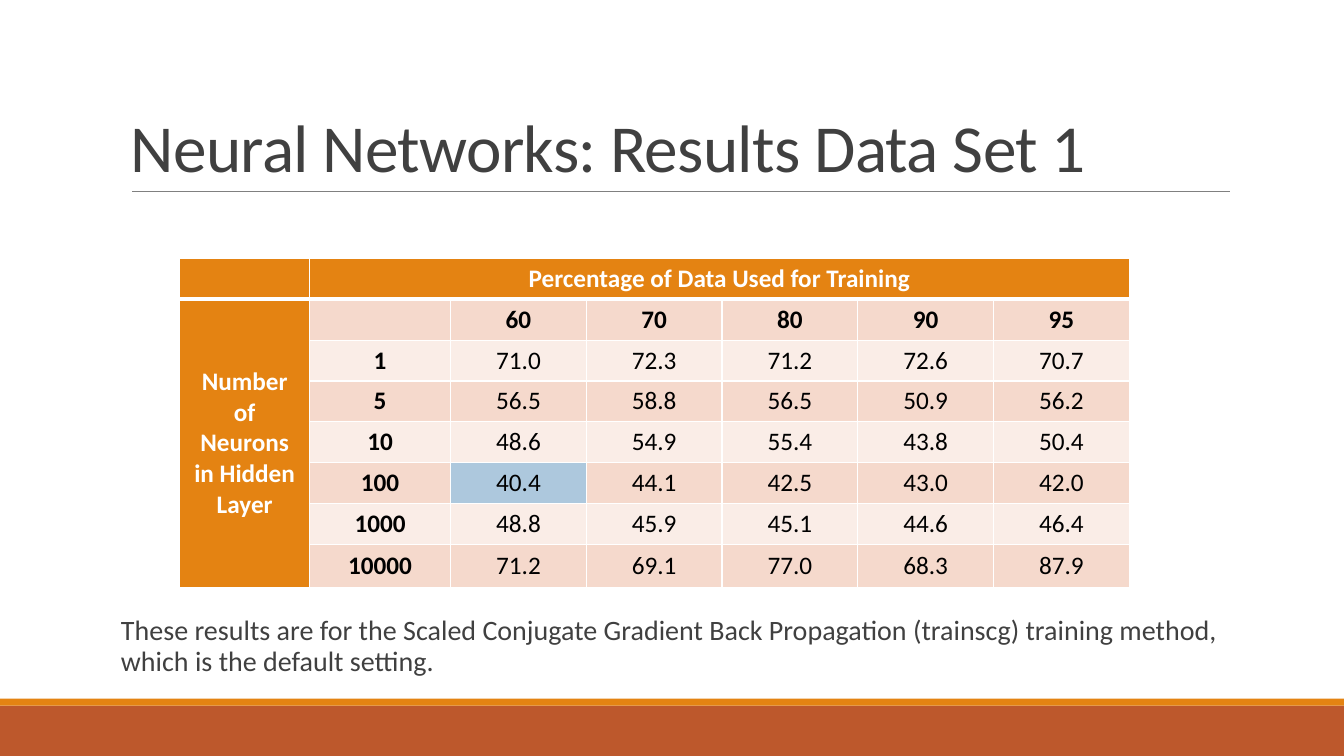
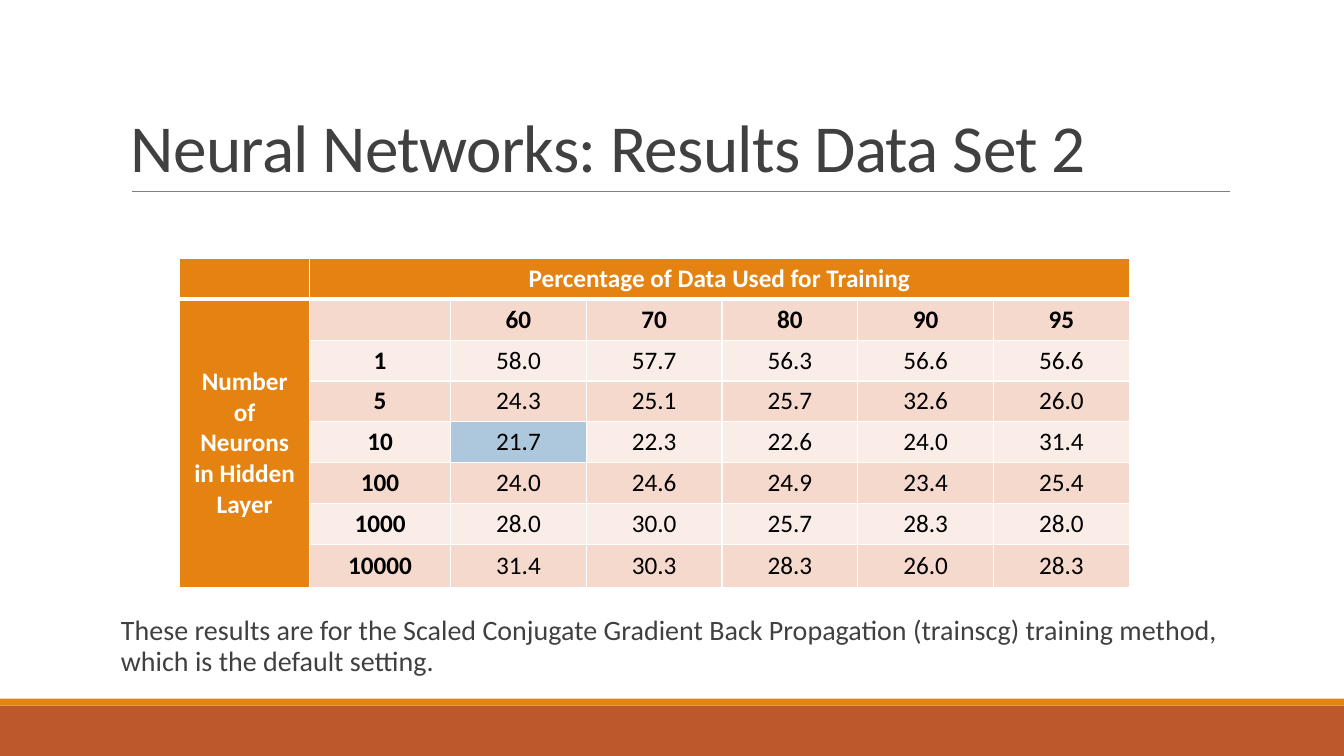
from lxml import etree
from pptx import Presentation
from pptx.dml.color import RGBColor
from pptx.enum.shapes import MSO_CONNECTOR, MSO_SHAPE
from pptx.enum.text import MSO_ANCHOR, PP_ALIGN
from pptx.oxml.ns import qn
from pptx.util import Inches, Pt

RECTANGLE = MSO_SHAPE.RECTANGLE
STRAIGHT = MSO_CONNECTOR.STRAIGHT
TOP, MIDDLE, BOTTOM = MSO_ANCHOR.TOP, MSO_ANCHOR.MIDDLE, MSO_ANCHOR.BOTTOM
LEFT, CENTER = PP_ALIGN.LEFT, PP_ALIGN.CENTER

BLANK_LAYOUT = 6
FONT = "Calibri"
ORANGE, RUST, GRAY, INK = "E48312", "BD582C", "808080", "404040"
WHITE, BLACK, BEST = "FFFFFF", "000000", "ADC8DD"
BANDS = ("FAEDE7", "F5D9CC")

COLUMN_SHARES = [9.65, 10.5] + [10.1] * 5
ROW_SHARES = [5.4] * 7 + [5.7]

PERCENTAGES = [60, 70, 80, 90, 95]
NEURONS = [1, 5, 10, 100, 1000, 10000]
RESULTS = {
    "Neural Networks: Results Data Set 1": [
        [71.0, 72.3, 71.2, 72.6, 70.7],
        [56.5, 58.8, 56.5, 50.9, 56.2],
        [48.6, 54.9, 55.4, 43.8, 50.4],
        [40.4, 44.1, 42.5, 43.0, 42.0],
        [48.8, 45.9, 45.1, 44.6, 46.4],
        [71.2, 69.1, 77.0, 68.3, 87.9],
    ],
    "Neural Networks: Results Data Set 2": [
        [58.0, 57.7, 56.3, 56.6, 56.6],
        [24.3, 25.1, 25.7, 32.6, 26.0],
        [21.7, 22.3, 22.6, 24.0, 31.4],
        [24.0, 24.6, 24.9, 23.4, 25.4],
        [28.0, 30.0, 25.7, 28.3, 28.0],
        [31.4, 30.3, 28.3, 26.0, 28.3],
    ],
}
NOTE = ("These results are for the Scaled Conjugate Gradient Back Propagation "
        "(trainscg) training method, which is the default setting.")


def color(value):
    return RGBColor.from_string(value)


def write_text(frame, text, size=18, ink=BLACK, bold=False, align=LEFT,
               line_spacing=1.0, space_after=0, tracking=0):
    paragraph = frame.paragraphs[0]
    paragraph.alignment = align
    paragraph.line_spacing = line_spacing
    paragraph.space_after = Pt(space_after)
    run = paragraph.add_run()
    run.text = text
    run.font.name = FONT
    run.font.size = Pt(size)
    run.font.bold = bold
    run.font.color.rgb = color(ink)
    if tracking:
        run.font._element.set("spc", str(round(tracking * 100)))


def set_borders(cell, top=1, bottom=1):
    properties = cell._tc.get_or_add_tcPr()
    widths = {"a:lnL": 1, "a:lnR": 1, "a:lnT": top, "a:lnB": bottom}
    for position, (tag, width) in enumerate(widths.items()):
        line = etree.Element(qn(tag), w=str(Pt(width)))
        fill = etree.SubElement(line, qn("a:solidFill"))
        etree.SubElement(fill, qn("a:srgbClr"), val=WHITE)
        properties.insert(position, line)


class Deck:
    def __init__(self):
        self.presentation = Presentation()
        self.presentation.slide_width = Inches(13.33)
        self.presentation.slide_height = Inches(7.5)
        self.slide = None

    def across(self, share):
        return round(self.presentation.slide_width * share / 100)

    def down(self, share):
        return round(self.presentation.slide_height * share / 100)

    def box(self, left, top, width, height):
        return (self.across(left), self.down(top),
                self.across(width), self.down(height))

    def band(self, top, height, fill):
        shape = self.slide.shapes.add_shape(
            RECTANGLE, *self.box(0, top, 100, height))
        shape.shadow.inherit = False
        shape.fill.solid()
        shape.fill.fore_color.rgb = color(fill)
        shape.line.fill.background()

    def rule(self, left, right, level):
        connector = self.slide.shapes.add_connector(
            STRAIGHT, self.across(left), self.down(level),
            self.across(right), self.down(level))
        connector.line.color.rgb = color(GRAY)
        connector.line.width = Pt(0.5)
        etree.SubElement(connector._element.spPr, qn("a:effectLst"))

    def text(self, area, text, anchor=TOP, inset=0.1, **text_format):
        frame = self.slide.shapes.add_textbox(*self.box(*area)).text_frame
        frame.word_wrap = True
        frame.vertical_anchor = anchor
        frame.margin_left = frame.margin_right = Inches(inset)
        write_text(frame, text, **text_format)

    def start_slide(self, title):
        layout = self.presentation.slide_layouts[BLANK_LAYOUT]
        self.slide = self.presentation.slides.add_slide(layout)
        self.band(93.33, 6.67, RUST)
        self.band(92.4, 0.93, ORANGE)
        self.rule(9.85, 91.55, 25.33)
        self.text((9, 4.13, 82.5, 21.2), title, anchor=BOTTOM, size=48,
                  ink=INK, line_spacing=0.85, tracking=-0.5)

    def cell(self, table, row, column, text, fill, ink=BLACK, bold=True):
        cell = table.cell(row, column)
        cell.fill.solid()
        cell.fill.fore_color.rgb = color(fill)
        cell.vertical_anchor = MIDDLE
        set_borders(cell, top=3 if row == 1 else 1, bottom=3 if row == 0 else 1)
        if text:
            write_text(cell.text_frame, text, ink=ink, bold=bold, align=CENTER)

    def results_table(self, results):
        row_count, column_count = len(ROW_SHARES), len(COLUMN_SHARES)
        area = self.box(13.38, 34.2, sum(COLUMN_SHARES), sum(ROW_SHARES))
        table = self.slide.shapes.add_table(row_count, column_count, *area).table
        table.first_row = table.horz_banding = False
        for column, share in zip(table.columns, COLUMN_SHARES):
            column.width = self.across(share)
        for row, share in zip(table.rows, ROW_SHARES):
            row.height = self.down(share)

        headings = {(0, 1): "Percentage of Data Used for Training",
                    (1, 0): "Number of Neurons in Hidden Layer"}
        for row in range(row_count):
            for column in range(column_count):
                if row == 0 or column == 0:
                    self.cell(table, row, column, headings.get((row, column)),
                              ORANGE, ink=WHITE)
        table.cell(0, 1).merge(table.cell(0, column_count - 1))
        table.cell(1, 0).merge(table.cell(row_count - 1, 0))

        best = min(map(min, results))
        self.cell(table, 1, 1, None, BANDS[1])
        for column, percentage in enumerate(PERCENTAGES, 2):
            self.cell(table, 1, column, str(percentage), BANDS[1])
        for row, (neurons, values) in enumerate(zip(NEURONS, results), 2):
            fill = BANDS[row % 2]
            self.cell(table, row, 1, str(neurons), fill)
            for column, value in enumerate(values, 2):
                self.cell(table, row, column, f"{value:.1f}",
                          BEST if value == best else fill, bold=False)

    def note(self, text):
        self.text((9, 80.93, 84.45, 10.13), text, inset=0, size=20, ink=INK,
                  line_spacing=0.9, space_after=2)


def main():
    deck = Deck()
    for title, results in RESULTS.items():
        deck.start_slide(title)
        deck.results_table(results)
        deck.note(NOTE)
    deck.presentation.save("out.pptx")


if __name__ == "__main__":
    main()
